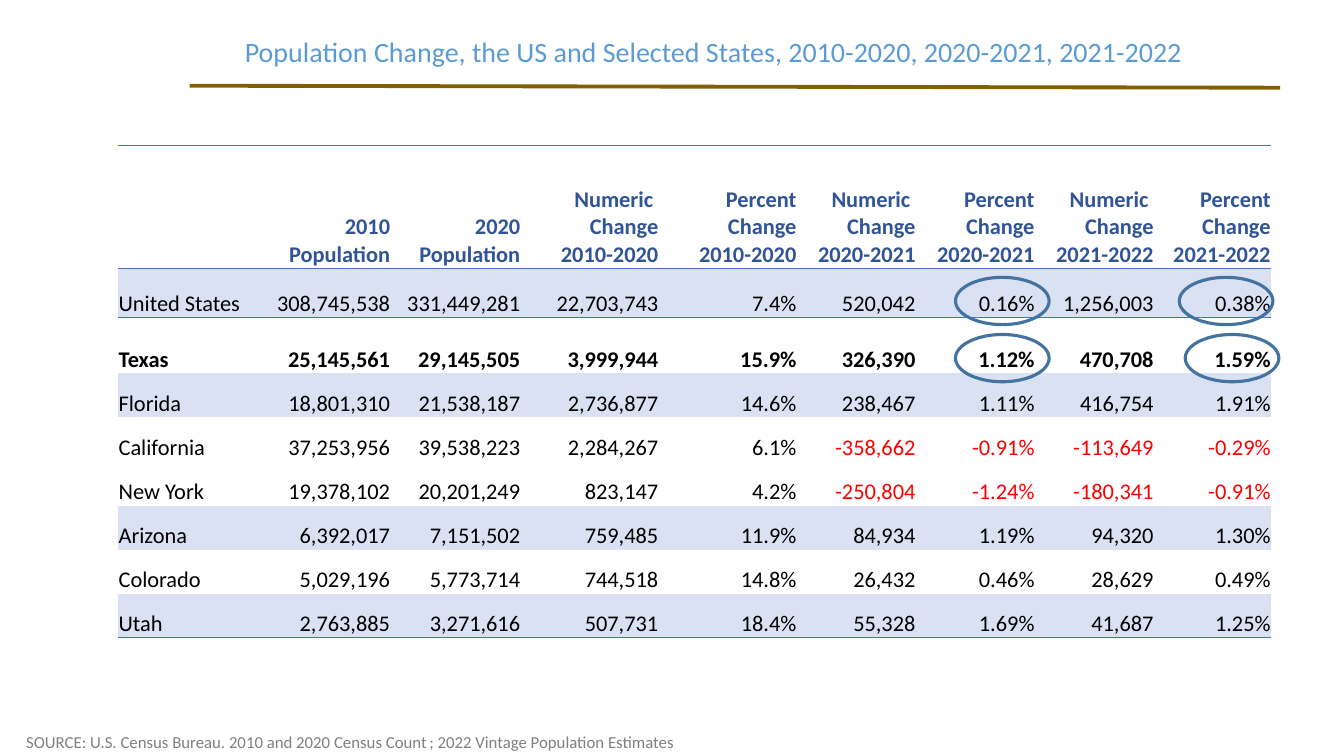
from dataclasses import dataclass

from lxml.etree import SubElement
from pptx import Presentation
from pptx.dml.color import RGBColor
from pptx.enum.shapes import MSO_CONNECTOR, MSO_SHAPE
from pptx.enum.text import MSO_ANCHOR as Anchor, PP_ALIGN as Align
from pptx.oxml.ns import qn
from pptx.util import Cm, Pt

FONT = "Calibri"
BAND = "D9E1F2"
RULE = "4472C4"
HEADING = "305496"
BLACK = "000000"
NEGATIVE = "FF0000"
NO_STYLE = "{2D5ABB26-0587-4C30-8999-92F81FD0307C}"


@dataclass
class StateRow:
    name: str
    values: str
    height: float = 1.11
    banded: bool = False
    bold: bool = False


@dataclass
class Label:
    text: str
    left: float
    top: float
    width: float
    height: float
    size: int
    color: str
    anchor: Anchor = Anchor.TOP
    spacing: float = 1.0


@dataclass
class Highlight:
    left: float
    top: float


HEADINGS = ["", "2010\vPopulation", "2020\vPopulation"] + [
    f"{measure}\vChange\v{period}"
    for period in ("2010-2020", "2020-2021", "2021-2022")
    for measure in ("Numeric ", "Percent")
]
COLUMN_WIDTHS = [3.76, 3.12, 3.28, 3.48, 3.48, 3, 3, 3, 2.95]
HEADING_HEIGHT, LAST_HEIGHT = 3.1, 1.04

STATES = [
    StateRow("United States", "308,745,538 331,449,281 22,703,743 7.4% 520,042 0.16% 1,256,003 0.38%",
             height=1.23, banded=True),
    StateRow("Texas", "25,145,561 29,145,505 3,999,944 15.9% 326,390 1.12% 470,708 1.59%",
             height=1.42, bold=True),
    StateRow("Florida", "18,801,310 21,538,187 2,736,877 14.6% 238,467 1.11% 416,754 1.91%", banded=True),
    StateRow("California", "37,253,956 39,538,223 2,284,267 6.1% -358,662 -0.91% -113,649 -0.29%"),
    StateRow("New York", "19,378,102 20,201,249 823,147 4.2% -250,804 -1.24% -180,341 -0.91%"),
    StateRow("Arizona", "6,392,017 7,151,502 759,485 11.9% 84,934 1.19% 94,320 1.30%", banded=True),
    StateRow("Colorado", "5,029,196 5,773,714 744,518 14.8% 26,432 0.46% 28,629 0.49%"),
    StateRow("Utah", "2,763,885 3,271,616 507,731 18.4% 55,328 1.69% 41,687 1.25%", banded=True),
]

LABELS = [
    Label("Population Change, the US and Selected States, 2010-2020, 2020-2021, 2021-2022",
          5.92, 0.25, 28.5, 2.18, 20, "5B9BD5", Anchor.MIDDLE, 0.9),
    Label("SOURCE: U.S. Census Bureau. 2010 and 2020 Census Count\t; 2022 Vintage Population Estimates",
          0.41, 18.31, 22.23, 0.76, 12, "808080"),
]

HIGHLIGHTS = [Highlight(24.08, 6.99), Highlight(24.08, 8.43),
              Highlight(29.72, 6.99), Highlight(29.87, 8.43)]


def rgb(value: str) -> RGBColor:
    return RGBColor.from_string(value)


def style_font(paragraph, size: int, color: str, bold: bool = False) -> None:
    for run in paragraph.runs:
        run.font.name = FONT
        run.font.size = Pt(size)
        run.font.bold = bold
        run.font.color.rgb = rgb(color)


def add_border(cell, side: str) -> None:
    line = SubElement(cell._tc.get_or_add_tcPr(), qn(f"a:{side}"), w=str(Pt(0.5)))
    fill = SubElement(line, qn("a:solidFill"))
    SubElement(fill, qn("a:srgbClr"), val=RULE)


def fill_cell(cell, text: str, color: str, bold: bool, align: Align) -> None:
    cell.vertical_anchor = Anchor.BOTTOM
    cell.margin_left = cell.margin_right = cell.margin_top = Cm(0.02)
    cell.margin_bottom = 0
    cell.text_frame.text = text
    paragraph = cell.text_frame.paragraphs[0]
    paragraph.alignment = align
    style_font(paragraph, 16, color, bold)


def add_population_table(slide) -> None:
    heights = [HEADING_HEIGHT, *(state.height for state in STATES), LAST_HEIGHT]
    frame = slide.shapes.add_table(len(heights), len(HEADINGS), Cm(2.97), Cm(3.66),
                                   Cm(sum(COLUMN_WIDTHS)), Cm(sum(heights)))
    table = frame.table
    table.first_row = table.horz_banding = False
    table._tbl.tblPr.find(qn("a:tableStyleId")).text = NO_STYLE
    for column, width in zip(table.columns, COLUMN_WIDTHS):
        column.width = Cm(width)
    for row, height in zip(table.rows, heights):
        row.height = Cm(height)

    # Heading row
    for index, heading in enumerate(HEADINGS):
        if heading:
            fill_cell(table.cell(0, index), heading, HEADING, True, Align.RIGHT)

    # One row per state
    for row_index, state in enumerate(STATES, start=1):
        for index, text in enumerate([state.name, *state.values.split()]):
            color = NEGATIVE if text.startswith("-") else BLACK
            align = Align.RIGHT if index else Align.LEFT
            fill_cell(table.cell(row_index, index), text, color, state.bold, align)

    # Rules above and below the headings and under the last state
    last = len(STATES)
    borders = {0: ("lnT", "lnB"), 1: ("lnT",), last: ("lnB",), last + 1: ("lnT",)}
    for row_index, sides in borders.items():
        for cell in table.rows[row_index].cells:
            for side in sides:
                add_border(cell, side)

    # Bands
    for row_index, state in enumerate(STATES, start=1):
        for cell in table.rows[row_index].cells:
            if state.banded:
                cell.fill.solid()
                cell.fill.fore_color.rgb = rgb(BAND)
            else:
                cell.fill.background()


def add_label(slide, label: Label) -> None:
    box = slide.shapes.add_textbox(Cm(label.left), Cm(label.top), Cm(label.width), Cm(label.height))
    frame = box.text_frame
    frame.word_wrap = True
    frame.vertical_anchor = label.anchor
    frame.text = label.text
    paragraph = frame.paragraphs[0]
    paragraph.line_spacing = label.spacing
    style_font(paragraph, label.size, label.color)


def add_highlight(slide, highlight: Highlight) -> None:
    ring = slide.shapes.add_shape(MSO_SHAPE.OVAL, Cm(highlight.left), Cm(highlight.top), Cm(2.36), Cm(1.19))
    ring.shadow.inherit = False
    ring.fill.background()
    ring.line.color.rgb = rgb("43739E")
    ring.line.width = Pt(2.25)


def add_title_rule(slide) -> None:
    rule = slide.shapes.add_connector(MSO_CONNECTOR.STRAIGHT, Cm(4.78), Cm(2.16), Cm(32.26), Cm(2.21))
    rule.line.color.rgb = rgb("806000")
    rule.line.width = Pt(2.75)
    SubElement(rule._element.spPr, qn("a:effectLst"))


def main() -> None:
    deck = Presentation()
    deck.slide_width, deck.slide_height = Cm(33.87), Cm(19.05)
    slide = deck.slides.add_slide(deck.slide_layouts[6])
    add_title_rule(slide)
    add_population_table(slide)
    for label in LABELS:
        add_label(slide, label)
    for highlight in HIGHLIGHTS:
        add_highlight(slide, highlight)
    deck.save("out.pptx")


if __name__ == "__main__":
    main()
